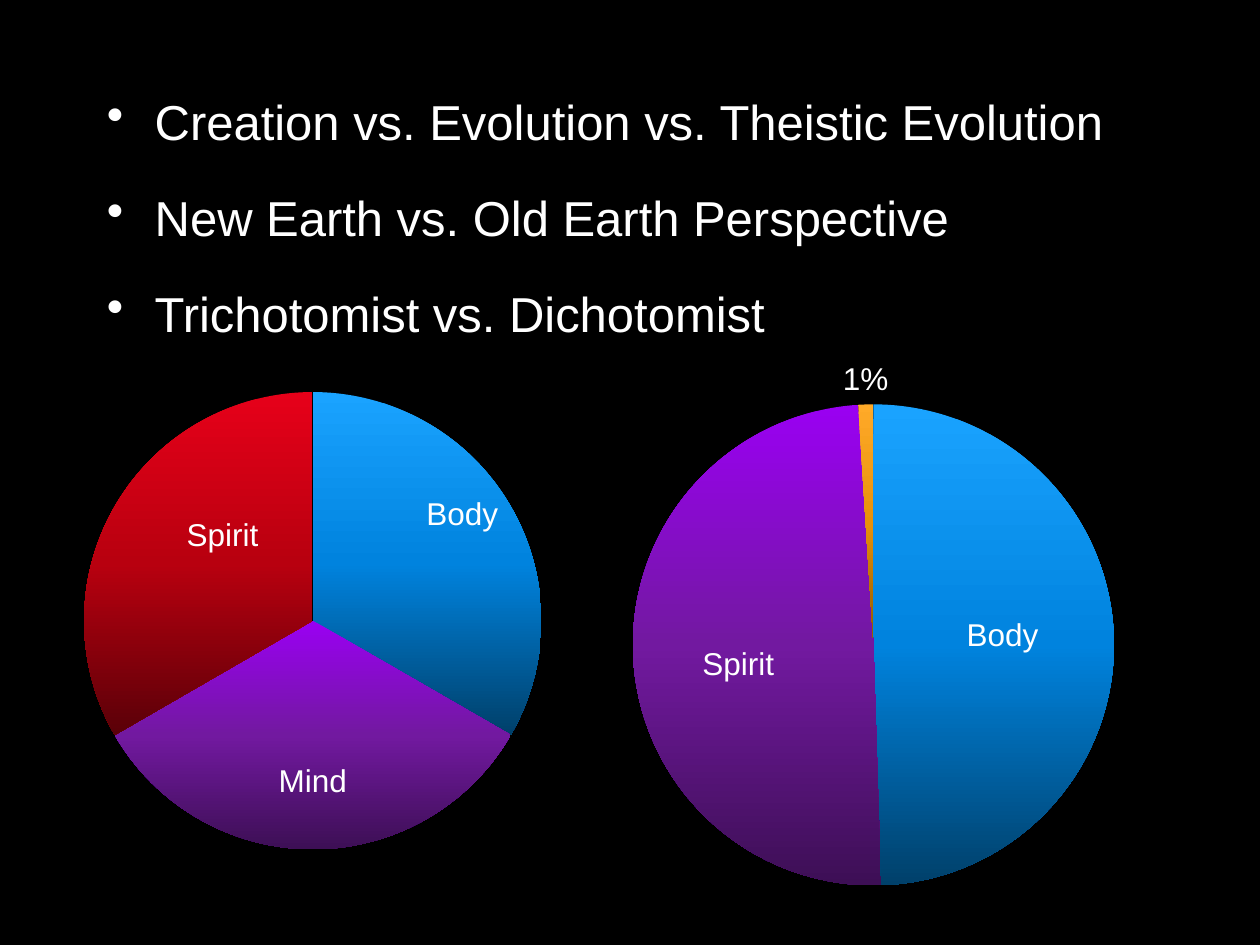
import copy

import pptx
import pptx.chart.data
import pptx.dml.color
import pptx.enum.chart
import pptx.oxml
import pptx.oxml.ns
import pptx.util
from pptx.util import Inches

FONT = "Arial"
WHITE = "FFFFFF"

# Top, middle and bottom colour of each slice
BLUE = ("1AA3FF", "0083DE", "00406A")
PURPLE = ("9A00F2", "7219A0", "3D0F55")
RED = ("E60019", "B8000F", "5A0008")
ORANGE = ("FFAA28", "E8900A", "8A5500")

LABEL_POSITION = pptx.enum.chart.XL_LABEL_POSITION


def color(hex_string):
    return pptx.dml.color.RGBColor.from_string(hex_string)


def style_font(font, size):
    font.name = FONT
    font.size = pptx.util.Pt(size)
    font.color.rgb = color(WHITE)


def write_text(paragraph, text, size, space_before=0, bullet=None, indent=0):
    if bullet:
        properties = paragraph._p.get_or_add_pPr()
        properties.set("marL", str(Inches(indent)))
        properties.set("indent", str(-Inches(indent)))
        properties.append(pptx.oxml.parse_xml(
            f'<a:buChar {pptx.oxml.ns.nsdecls("a")} char="{bullet}"/>'))
    if space_before:
        paragraph.space_before = pptx.util.Pt(space_before)
    run = paragraph.add_run()
    run.text = text
    style_font(run.font, size)


def add_bullets(slide, lines):
    box = slide.shapes.add_textbox(Inches(0.75), Inches(0.65), Inches(8.5), Inches(2.2))
    frame = box.text_frame
    frame.word_wrap = True
    frame.margin_top = Inches(0.08)
    for number, line in enumerate(lines):
        paragraph = frame.add_paragraph() if number else frame.paragraphs[0]
        write_text(paragraph, line, 28, space_before=21 if number else 0,
                   bullet="•", indent=0.38)


def insert_layout(parent, index, modes, **fractions):
    """Place a chart part by fractions of the chart's size."""
    parts = "".join(f'<c:{tag} val="{value}"/>' for tag, value in modes.items())
    parts += "".join(f'<c:{tag} val="{value:.3f}"/>' for tag, value in fractions.items())
    parent.insert(index, pptx.oxml.parse_xml(
        f'<c:layout {pptx.oxml.ns.nsdecls("c")}>'
        f"<c:manualLayout>{parts}</c:manualLayout></c:layout>"))


def fill_gradient(fill, colors):
    fill.gradient()
    fill.gradient_angle = 270
    first = fill.gradient_stops[0]._gs
    first.addnext(copy.deepcopy(first))
    for stop, position, hex_string in zip(fill.gradient_stops, (0, 0.5, 1), colors):
        stop.position = position
        stop.color.rgb = color(hex_string)


def add_pie(slide, frame, circle, categories, values, slice_colors, label_shifts):
    """frame is left, top, width, height; circle is left, top, diameter."""
    left, top, width, height = frame
    data = pptx.chart.data.CategoryChartData()
    data.categories = categories
    data.add_series("Series 1", values)
    chart = slide.shapes.add_chart(
        pptx.enum.chart.XL_CHART_TYPE.PIE,
        Inches(left), Inches(top), Inches(width), Inches(height), data).chart
    chart.has_legend = False
    chart.has_title = False
    style_font(chart.font, 18)
    plot = chart.plots[0]
    plot.vary_by_categories = True
    series = plot.series[0]

    # Circle
    plot_area = chart._chartSpace.xpath(".//c:plotArea")[0]
    for old_layout in plot_area.xpath("./c:layout"):
        plot_area.remove(old_layout)
    circle_left, circle_top, diameter = circle
    insert_layout(plot_area, 0,
                  {"layoutTarget": "inner", "xMode": "edge", "yMode": "edge"},
                  x=(circle_left - left) / width, y=(circle_top - top) / height,
                  w=diameter / width, h=diameter / height)

    # Slices
    for number, colors in enumerate(slice_colors):
        if values[number] is not None:
            slice_format = series.points[number].format
            fill_gradient(slice_format.fill, colors)
            slice_format.line.fill.background()

    # Labels: percentages outside, names moved from the slice middle
    labels = series.data_labels
    labels.show_value = False
    labels.show_percentage = True
    labels.number_format = "0%"
    labels.number_format_is_linked = False
    labels.position = LABEL_POSITION.OUTSIDE_END
    style_font(labels.font, 18)
    for number, (shift_x, shift_y) in enumerate(label_shifts):
        label = series.points[number].data_label
        write_text(label.text_frame.paragraphs[0], categories[number], 18)
        label.position = LABEL_POSITION.CENTER
        element = series._element.xpath(f'.//c:dLbl[c:idx/@val="{number}"]')[0]
        insert_layout(element, 1, {}, x=shift_x / width, y=shift_y / height)


def main():
    presentation = pptx.Presentation()
    presentation.slide_width = Inches(10)
    presentation.slide_height = Inches(7.5)
    slide = presentation.slides.add_slide(presentation.slide_layouts[6])
    background = slide.background.fill
    background.solid()
    background.fore_color.rgb = color("000000")

    add_bullets(slide, [
        "Creation vs. Evolution vs. Theistic Evolution",
        "New Earth vs. Old Earth Perspective",
        "Trichotomist vs. Dichotomist",
    ])

    slice_colors = (BLUE, PURPLE, RED, ORANGE)
    # Trichotomist view
    add_pie(slide, (0.03, 2.88, 4.4, 4.44), (0.67, 3.11, 3.63),
            ("Body", "Mind", "Spirit", ""), (33, 33, 33, None), slice_colors,
            ((0.4, -0.39), (0, 0.37), (0.07, -0.22)))
    # Dichotomist view
    add_pie(slide, (4.24, 2.73, 5.39, 4.44), (5.02, 3.21, 3.82),
            ("Body", "Spirit", "", ""), (49, 49, None, 1), slice_colors,
            ((0.07, -0.06), (-0.12, 0.11)))

    presentation.save("out.pptx")


if __name__ == "__main__":
    main()
